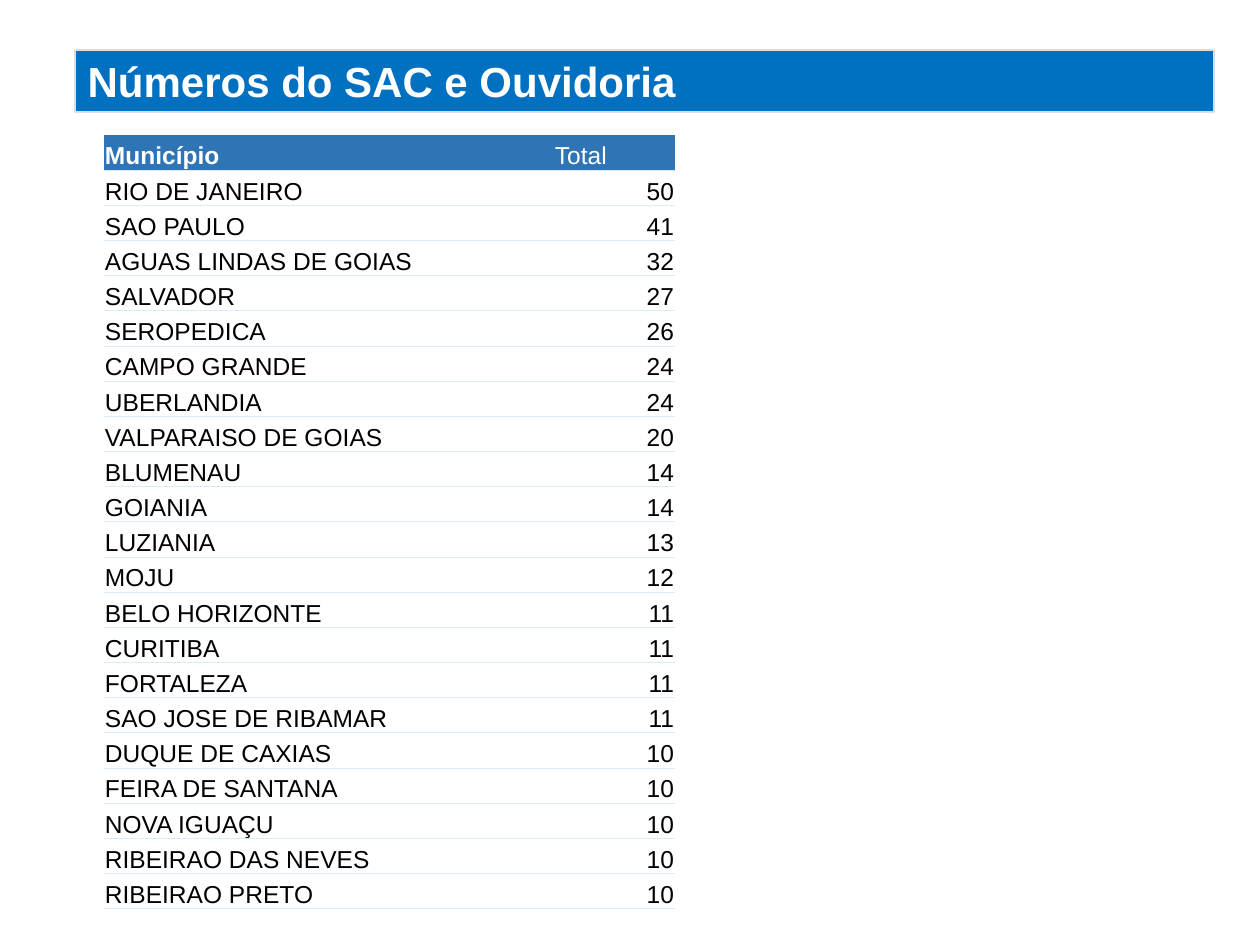
from dataclasses import dataclass

from lxml.etree import SubElement
from pptx import Presentation
from pptx.dml.color import RGBColor as RGB
from pptx.enum.text import MSO_ANCHOR as Anchor, MSO_AUTO_SIZE as AutoSize, PP_ALIGN as Align
from pptx.oxml.ns import qn
from pptx.util import Pt

PX = 914400 // 126


@dataclass(frozen=True)
class Theme:
    font: str = "Arial"
    title_size: int = 24
    table_size: int = 14
    banner: str = "0070C0"
    banner_edge: str = "DDDDDD"
    header: str = "2F75B5"
    rule: str = "DDEBF7"
    light: str = "FFFFFF"
    dark: str = "000000"


theme = Theme()

complaints = [
    ("RIO DE JANEIRO", 50),
    ("SAO PAULO", 41),
    ("AGUAS LINDAS DE GOIAS", 32),
    ("SALVADOR", 27),
    ("SEROPEDICA", 26),
    ("CAMPO GRANDE", 24),
    ("UBERLANDIA", 24),
    ("VALPARAISO DE GOIAS", 20),
    ("BLUMENAU", 14),
    ("GOIANIA", 14),
    ("LUZIANIA", 13),
    ("MOJU", 12),
    ("BELO HORIZONTE", 11),
    ("CURITIBA", 11),
    ("FORTALEZA", 11),
    ("SAO JOSE DE RIBAMAR", 11),
    ("DUQUE DE CAXIAS", 10),
    ("FEIRA DE SANTANA", 10),
    ("NOVA IGUAÇU", 10),
    ("RIBEIRAO DAS NEVES", 10),
    ("RIBEIRAO PRETO", 10),
]


def set_borders(cell, top, bottom):
    """Draw the top and bottom edges in the given colours and hide the sides."""
    properties = cell._tc.get_or_add_tcPr()
    for side, color in (("L", None), ("R", None), ("T", top), ("B", bottom)):
        edge = SubElement(properties, qn(f"a:ln{side}"), w=str(Pt(0.5)))
        if color:
            SubElement(SubElement(edge, qn("a:solidFill")), qn("a:srgbClr"), val=color)
        else:
            SubElement(edge, qn("a:noFill"))


def set_font(paragraph, size, color, bold):
    font = paragraph.font
    font.name, font.size, font.bold = theme.font, Pt(size), bold
    font.color.rgb = RGB.from_string(color)


deck = Presentation()
deck.slide_width, deck.slide_height = 1260 * PX, 945 * PX
slide = deck.slides.add_slide(deck.slide_layouts[5])

# Title banner
title = slide.shapes.title
title.left, title.top, title.width, title.height = 75 * PX, 50 * PX, 1139 * PX, 62 * PX
title.fill.solid()
title.fill.fore_color.rgb = RGB.from_string(theme.banner)
title.line.color.rgb = RGB.from_string(theme.banner_edge)
title.line.width = Pt(0.75)
title_text = title.text_frame
title_text.text = "Números do SAC e Ouvidoria"
title_text.auto_size = AutoSize.NONE
title_text.vertical_anchor = Anchor.MIDDLE
title_text.paragraphs[0].alignment = Align.LEFT
set_font(title_text.paragraphs[0], theme.title_size, theme.light, True)

# Totals by municipality
rows = [("Município", "Total"), *complaints]
column_widths = (450, 121)
table_height = 774 * PX
table = slide.shapes.add_table(
    len(rows), len(column_widths), 104 * PX, 135 * PX, sum(column_widths) * PX, table_height
).table
table.horz_banding = False
for column, width in zip(table.columns, column_widths):
    column.width = width * PX

for r, values in enumerate(rows):
    is_header = r == 0
    table.rows[r].height = table_height // len(rows)
    for c, value in enumerate(values):
        cell = table.cell(r, c)
        cell.text = str(value)
        cell.vertical_anchor = Anchor.BOTTOM
        cell.margin_left = cell.margin_right = cell.margin_top = PX
        cell.margin_bottom = 0
        set_borders(cell, theme.header if is_header else theme.rule, theme.rule)
        if is_header:
            cell.fill.solid()
            cell.fill.fore_color.rgb = RGB.from_string(theme.header)
        else:
            cell.fill.background()
        entry = cell.text_frame.paragraphs[0]
        entry.alignment = Align.LEFT if is_header or c == 0 else Align.RIGHT
        set_font(entry, theme.table_size, theme.light if is_header else theme.dark, is_header and c == 0)

deck.save("out.pptx")
